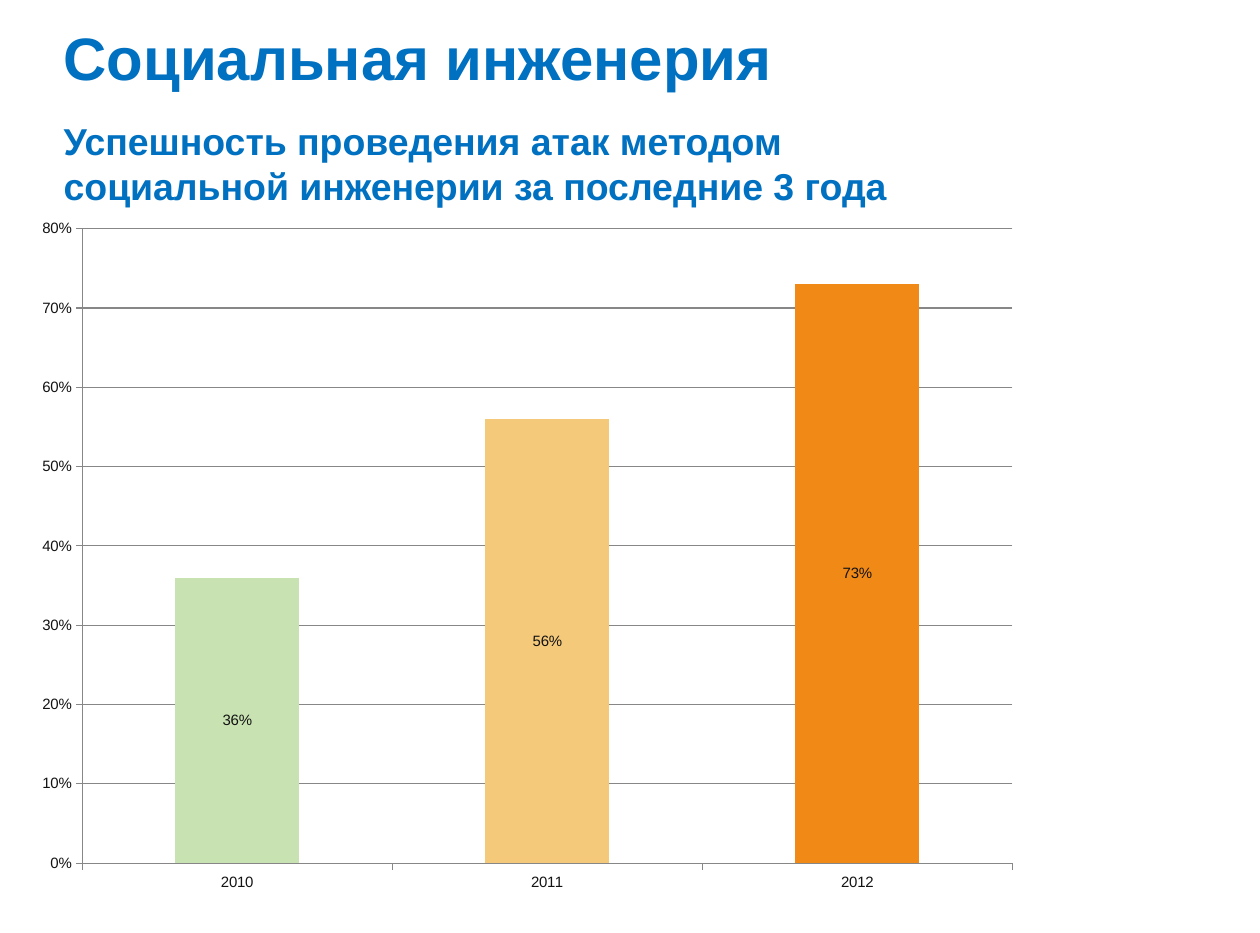
import pptx
import pptx.chart.data
import pptx.dml.color
import pptx.enum.chart
import pptx.enum.text
import pptx.oxml
import pptx.util

Pt = pptx.util.Pt
COLORS = {
    "heading": "0070C0",
    "label": "131313",
    "axis": "878787",
    "2010": "C8E2B1",
    "2011": "F5C97A",
    "2012": "F18917",
}
success_rates = {"2010": 0.36, "2011": 0.56, "2012": 0.73}
plot_area = {"x": 0.053, "y": 0.145, "w": 0.931, "h": 0.81}


def rgb(name):
    return pptx.dml.color.RGBColor.from_string(COLORS[name])


def add_heading(slide, text, box, size, wrap, space_after=0):
    frame = slide.shapes.add_textbox(*map(Pt, box)).text_frame
    frame.word_wrap = wrap
    frame.auto_size = pptx.enum.text.MSO_AUTO_SIZE.SHAPE_TO_FIT_TEXT
    paragraph = frame.paragraphs[0]
    paragraph.text = text
    paragraph.space_after = Pt(space_after)
    paragraph.font.name = "Arial"
    paragraph.font.size = Pt(size)
    paragraph.font.bold = True
    paragraph.font.color.rgb = rgb("heading")


presentation = pptx.Presentation()
presentation.slide_width = Pt(841.68)
presentation.slide_height = Pt(623.52)
slide = presentation.slides.add_slide(presentation.slide_layouts[6])

add_heading(slide, "Социальная инженерия", (35.5, 10, 495.5, 55.5), 40, False)

# Success rate by year
rate_data = pptx.chart.data.CategoryChartData(number_format="0%")
rate_data.categories = list(success_rates)
rate_data.add_series("Series 1", list(success_rates.values()))
chart = slide.shapes.add_chart(
    pptx.enum.chart.XL_CHART_TYPE.COLUMN_STACKED,
    Pt(19.5), Pt(77), Pt(667.5), Pt(523.5), rate_data,
).chart
chart.has_legend = False
chart.has_title = False
chart.font.name = "Arial"
chart.font.size = Pt(10)
chart.font.color.rgb = rgb("label")

rate_axis = chart.value_axis
rate_axis.minimum_scale = 0
rate_axis.maximum_scale = 0.8
rate_axis.major_unit = 0.1
rate_axis.tick_labels.number_format = "0%"
rate_axis.tick_labels.number_format_is_linked = False
rate_axis.has_major_gridlines = True
for axis in (chart.category_axis, rate_axis):
    axis.major_tick_mark = pptx.enum.chart.XL_TICK_MARK.OUTSIDE
for line in (chart.category_axis.format.line, rate_axis.format.line,
             rate_axis.major_gridlines.format.line):
    line.color.rgb = rgb("axis")
    line.width = Pt(0.75)

columns = chart.plots[0]
columns.gap_width = 150
columns.overlap = 100
columns.vary_by_categories = False
columns.has_data_labels = True
rate_labels = columns.data_labels
rate_labels.show_value = True
rate_labels.number_format = "0%"
rate_labels.number_format_is_linked = False
rate_labels.position = pptx.enum.chart.XL_LABEL_POSITION.CENTER
for index, year in enumerate(success_rates):
    fill = columns.series[0].points[index].format.fill
    fill.solid()
    fill.fore_color.rgb = rgb(year)

# Fixed inner plot area, as fractions of the chart
modes = "".join(f'<c:{side}Mode val="edge"/>' for side in "xy")
sizes = "".join(f'<c:{side} val="{value}"/>' for side, value in plot_area.items())
layout = pptx.oxml.parse_xml(
    '<c:layout xmlns:c="http://schemas.openxmlformats.org/drawingml/2006/chart">'
    f'<c:manualLayout><c:layoutTarget val="inner"/>{modes}{sizes}</c:manualLayout>'
    "</c:layout>"
)
plot_element = chart.element.chart.plotArea
for old_layout in plot_element.xpath("c:layout"):
    plot_element.remove(old_layout)
plot_element.insert(0, layout)

add_heading(
    slide,
    "Успешность проведения атак методом социальной инженерии за последние 3 года",
    (35.5, 75.5, 623.5, 67.5), 25, True, space_after=6,
)

presentation.save("out.pptx")
